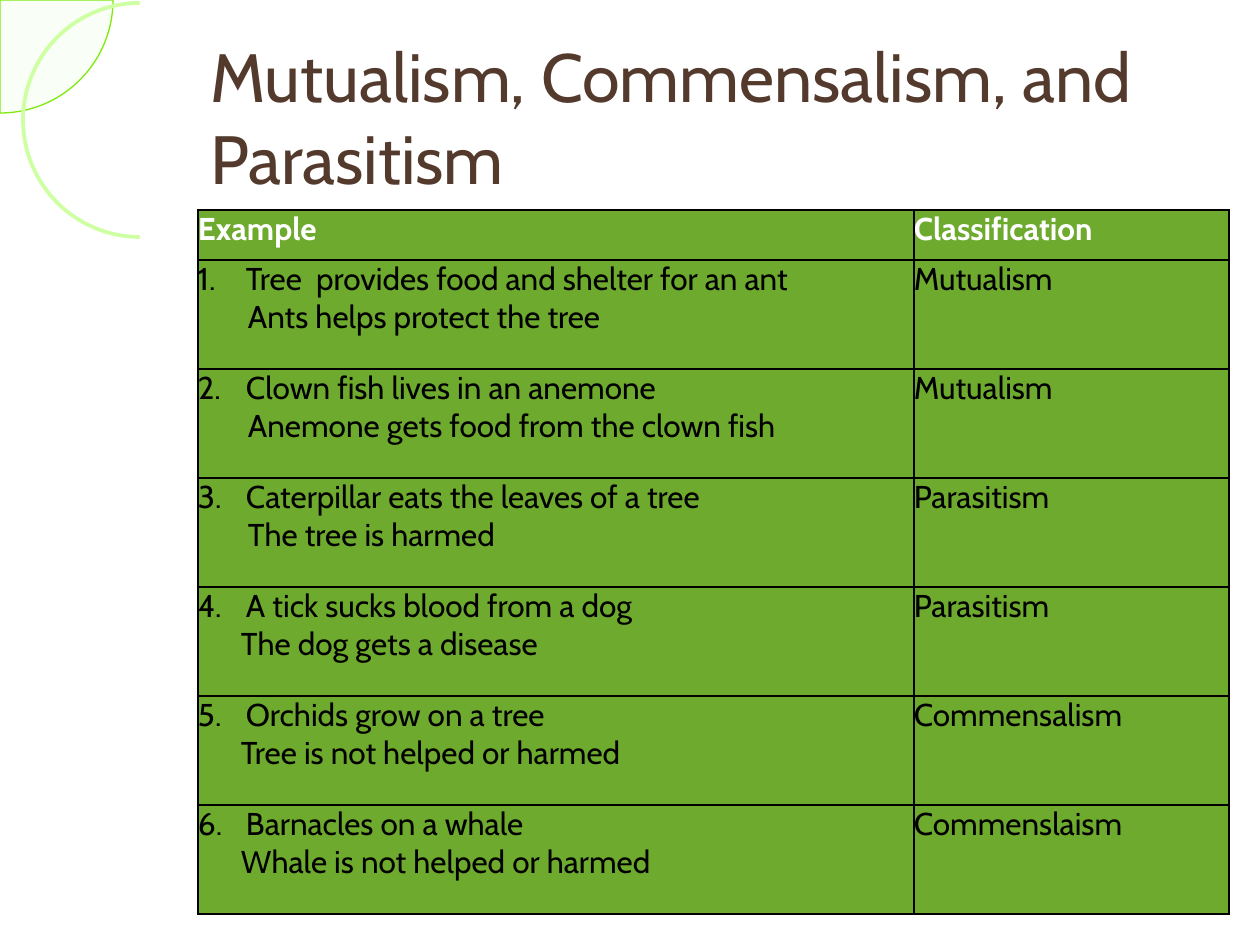
from dataclasses import dataclass
from typing import Optional

from lxml.etree import SubElement
from pptx import Presentation
from pptx.dml.color import RGBColor
from pptx.enum.shapes import MSO_SHAPE as SHAPE
from pptx.enum.text import MSO_ANCHOR as ANCHOR
from pptx.oxml import parse_xml
from pptx.oxml.ns import nsdecls, qn
from pptx.util import Emu, Pt


@dataclass(frozen=True)
class Theme:
    font: str = "Cabin"
    title: str = "533A2C"
    white: str = "FFFFFF"
    black: str = "000000"
    cell: str = "6EAA2E"
    leaf: str = "EEFFE4"
    leaf_edge: str = "7EE90C"
    ring: str = "CFFFA3"
    title_pt: float = 39
    table_pt: float = 18
    leaf_line_pt: float = 0.75
    ring_line_pt: float = 2.15
    border_pt: float = 1


@dataclass(frozen=True)
class Example:
    text: str
    detail: str
    kind: str
    detail_left: int


T = Theme()
NUMBER_INDENT = 48
COLUMNS = (716, 315)
HEADER_H, ROW_H = 50, 109

EXAMPLES = [
    Example("Tree  provides food and shelter for an ant",
            "Ants helps protect the tree", "Mutualism", 50),
    Example("Clown fish lives in an anemone",
            "Anemone gets food from the clown fish", "Mutualism", 50),
    Example("Caterpillar eats the leaves of a tree",
            "The tree is harmed", "Parasitism", 50),
    Example("A tick sucks blood from a dog",
            "The dog gets a disease", "Parasitism", 43),
    Example("Orchids grow on a tree",
            "Tree is not helped or harmed", "Commensalism", 43),
    Example("Barnacles on a whale",
            "Whale is not helped or harmed", "Commenslaism", 43),
]


def px(n: int) -> Emu:
    return Emu(round(n * 914400 / 126))


def rgb(color: str) -> RGBColor:
    return RGBColor.from_string(color)


def write(p, text: str, *, size: float = T.table_pt, color: str = T.black,
          bold: bool = False, left: int = 0, number: Optional[int] = None) -> None:
    """Fill a paragraph, optionally indented or numbered."""
    pPr = p._p.get_or_add_pPr()
    if left:
        pPr.set("marL", str(px(left)))
        pPr.set("indent", "0")
    if number is not None:
        pPr.set("indent", str(-px(left)))
        clr = SubElement(pPr, qn("a:buClr"))
        SubElement(clr, qn("a:srgbClr"), val=color)
        SubElement(pPr, qn("a:buAutoNum"), type="arabicPeriod", startAt=str(number))
    r = p.add_run()
    r.text = text
    r.font.name = T.font
    r.font.size = Pt(size)
    r.font.bold = bold
    r.font.color.rgb = rgb(color)


def add_shape(s, kind: SHAPE, x: int, y: int, w: int, h: int, *,
              fill: Optional[str] = None, alpha: Optional[int] = None,
              line: Optional[str] = None, line_pt: float = 1):
    sp = s.shapes.add_shape(kind, px(x), px(y), px(w), px(h))
    sp.shadow.inherit = False
    if fill:
        sp.fill.solid()
        sp.fill.fore_color.rgb = rgb(fill)
        if alpha is not None:
            clr = sp._element.spPr.find(qn("a:solidFill"))[0]
            SubElement(clr, qn("a:alpha"), val=str(alpha * 1000))
    else:
        sp.fill.background()
    if line:
        sp.line.color.rgb = rgb(line)
        sp.line.width = Pt(line_pt)
    else:
        sp.line.fill.background()
    return sp


def style_cell(cell) -> None:
    """Green fill, no margins and a thin black border on every side."""
    cell.margin_left = cell.margin_right = cell.margin_top = cell.margin_bottom = 0
    cell.fill.solid()
    cell.fill.fore_color.rgb = rgb(T.cell)
    tcPr = cell._tc.get_or_add_tcPr()
    for i, side in enumerate("LRTB"):
        tcPr.insert(i, parse_xml(
            f'<a:ln{side} {nsdecls("a")} w="{Pt(T.border_pt)}"><a:solidFill>'
            f'<a:srgbClr val="{T.black}"/></a:solidFill></a:ln{side}>'))


def add_decoration(s) -> None:
    leaf = add_shape(s, SHAPE.PIE, -113, -113, 226, 226, fill=T.leaf, alpha=33,
                     line=T.leaf_edge, line_pt=T.leaf_line_pt)
    # Angles count in 60000ths of a degree, scaled by 100000: 0 to 90 degrees
    leaf.adjustments[0], leaf.adjustments[1] = 0, 90 * 0.6
    add_shape(s, SHAPE.OVAL, 23, 3, 234, 234, line=T.ring, line_pt=T.ring_line_pt)
    # White page panel hides the right half of the ring
    add_shape(s, SHAPE.RECTANGLE, 140, 0, 1120, 945, fill=T.white)


def add_title(s, text: str) -> None:
    tf = s.shapes.add_textbox(px(198), px(38), px(1033), px(157)).text_frame
    tf.word_wrap = True
    tf.vertical_anchor = ANCHOR.MIDDLE
    write(tf.paragraphs[0], text, size=T.title_pt, color=T.title)


def add_examples(s) -> None:
    n = len(EXAMPLES)
    table = s.shapes.add_table(n + 1, len(COLUMNS), px(198), px(210), px(sum(COLUMNS)),
                               px(HEADER_H + n * ROW_H)).table
    table.horz_banding = False
    for col, w in zip(table.columns, COLUMNS):
        col.width = px(w)
    for i, row in enumerate(table.rows):
        row.height = px(ROW_H if i else HEADER_H)
    for cell in table.iter_cells():
        style_cell(cell)

    # Header row
    for c, heading in enumerate(("Example", "Classification")):
        write(table.cell(0, c).text_frame.paragraphs[0], heading,
              color=T.white, bold=True)

    # Numbered examples
    for i, ex in enumerate(EXAMPLES, start=1):
        tf = table.cell(i, 0).text_frame
        write(tf.paragraphs[0], ex.text, left=NUMBER_INDENT, number=i)
        write(tf.add_paragraph(), ex.detail, left=ex.detail_left)
        write(table.cell(i, 1).text_frame.paragraphs[0], ex.kind)


def main() -> None:
    prs = Presentation()
    prs.slide_width, prs.slide_height = px(1260), px(945)
    s = prs.slides.add_slide(prs.slide_layouts[6])
    add_decoration(s)
    add_title(s, "Mutualism, Commensalism, and Parasitism")
    add_examples(s)
    prs.save("out.pptx")


if __name__ == "__main__":
    main()
